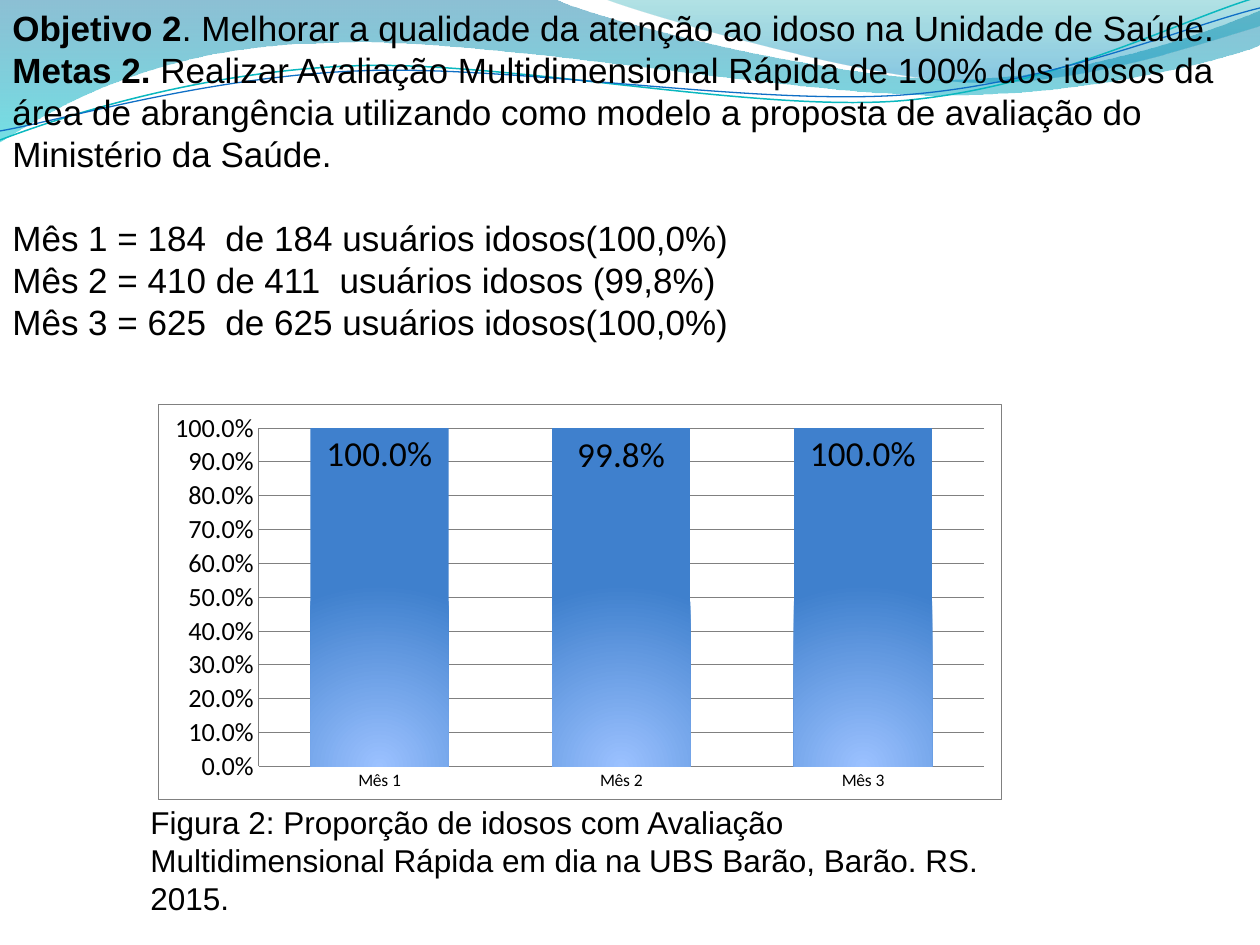
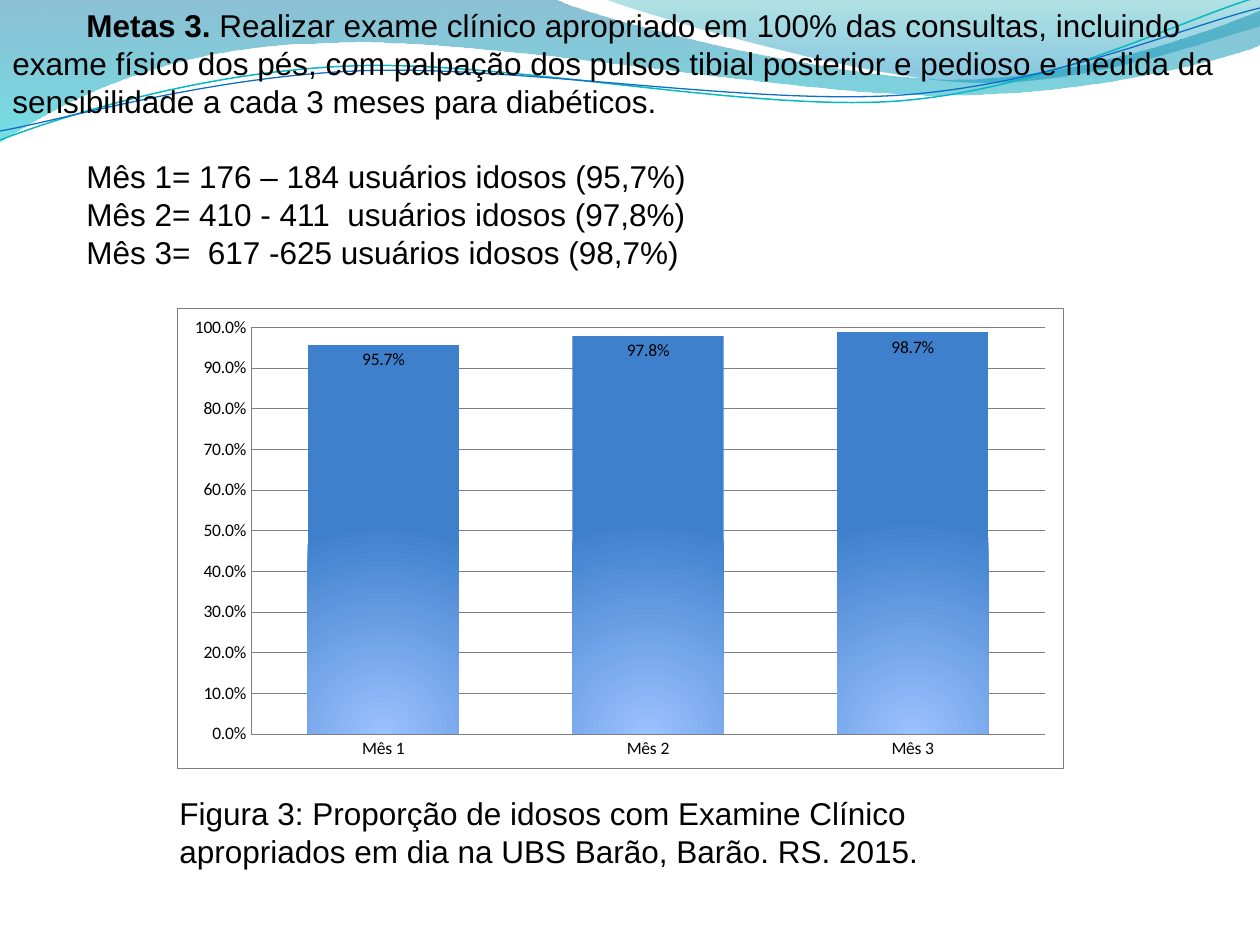
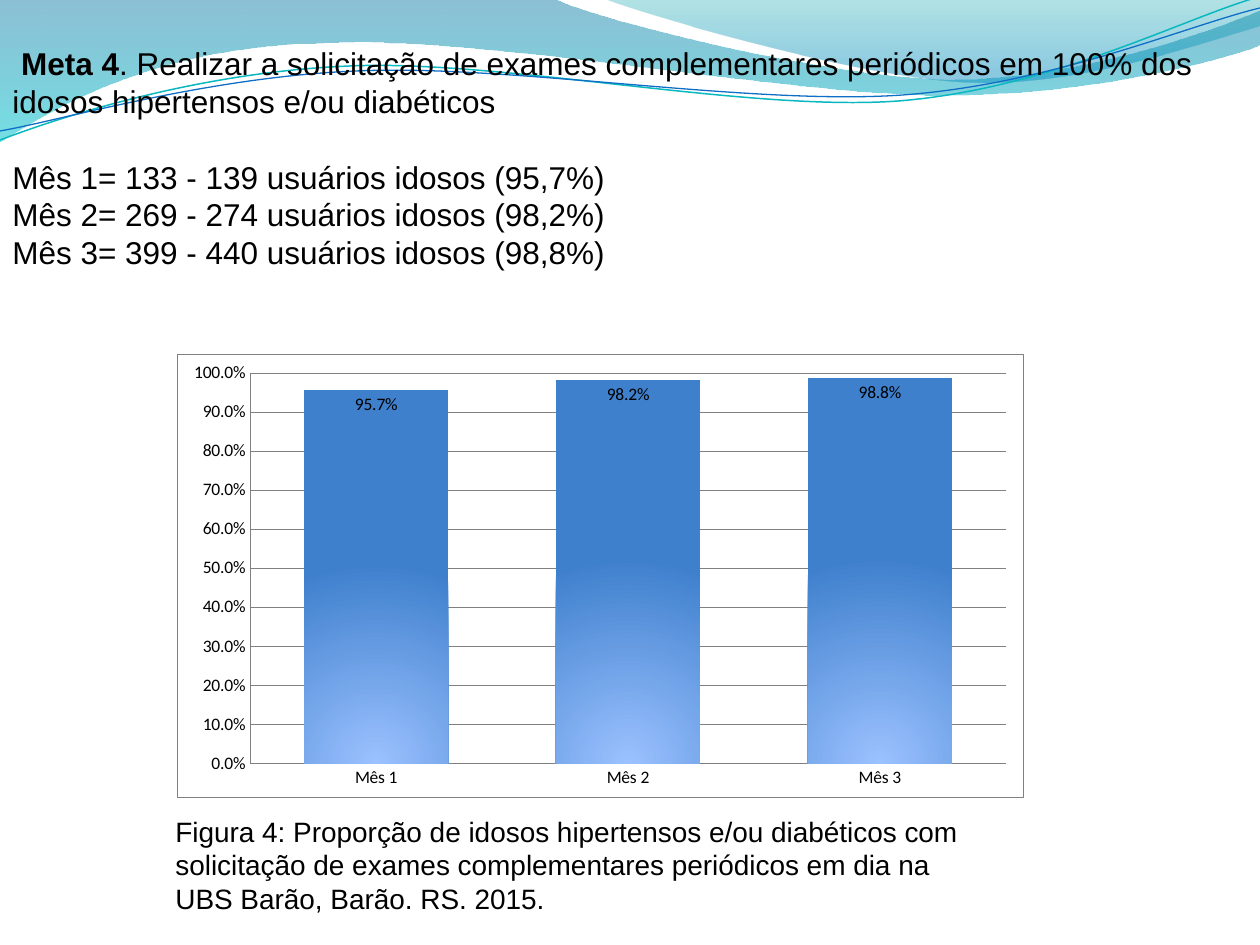
from lxml.etree import SubElement, fromstring
from pptx import Presentation
from pptx.chart.data import CategoryChartData as Data
from pptx.dml.color import RGBColor
from pptx.enum.chart import XL_CHART_TYPE as Kind, XL_LABEL_POSITION as Spot, XL_TICK_MARK as Tick
from pptx.oxml.ns import nsdecls, qn
from pptx.util import Pt

SCALE = 914400 / 126
WIDE, HIGH = 1260, 945
INK, GRID, PAPER = "000000", "808080", "FFFFFF"
PERCENT = "0.0%"
MONTHS = ["Mês 1", "Mês 2", "Mês 3"]
DOWN = '<a:lin ang="5400000" scaled="0"/>'
GLOW = '<a:path path="circle"><a:fillToRect l="50000" t="100000" r="50000" b="0"/></a:path>'
BAR = [(0, "9BC1FF", 100), (100, "3F80CD", 100)]

BANDS = [
    ([(0, 0), (554, -1), (600, 21, 837, 79, 955, 79), (1075, 79, 1207, 33, 1260, 11),
      (1261, 45), (1239, 55, 1096, 96, 940, 95), (784, 95, 481, 35, 324, 43),
      (163, 45, 58, 105, -1, 142)], [(0, "0074A1", 45), (100, "00C6CF", 55)]),
    ([(604, -1), (641, 14, 859, 78, 969, 82), (1079, 87, 1211, 40, 1260, 26), (1260, 0)],
     [(0, "00A1A9", 30), (80, "008BBF", 45)]),
]
LINES = [
    ([(0, 140), (60, 117, 199, 72, 349, 66), (498, 59, 747, 112, 898, 101),
      (1050, 89, 1182, 19, 1258, -3)], "0AB8BF", 0.85),
    ([(0, 131), (59, 121, 207, 77, 357, 71), (508, 64, 752, 106, 903, 95),
      (1053, 84, 1186, 26, 1260, 8)], "0F6FC6", 0.75),
]


def px(num):
    """Turn px into EMU."""
    return round(num * SCALE)


def tint(code):
    """Turn a hex string into a colour."""
    return RGBColor.from_string(code)


def shade(node, stops, way):
    """Replace a solid fill element with a gradient."""
    marks = "".join(
        f'<a:gs pos="{pos * 1000}"><a:srgbClr val="{code}"><a:alpha val="{part * 1000}"/>'
        f"</a:srgbClr></a:gs>" for pos, code, part in stops)
    grad = fromstring(f'<a:gradFill {nsdecls("a")} rotWithShape="1">'
                      f"<a:gsLst>{marks}</a:gsLst>{way}</a:gradFill>")
    node.getparent().replace(node, grad)


def outline(slide, route, close):
    """Draw a freeform whose six-number steps are Bezier curves."""
    dots = [(px(x), px(y)) for step in route for x, y in zip(step[::2], step[1::2])]
    pen = slide.shapes.build_freeform(*dots[0])
    pen.add_line_segments(dots[1:], close=close)
    shape = pen.convert_to_shape()
    shape.shadow.inherit = False
    legs = iter(shape.element.xpath(".//a:lnTo"))
    for step in route[1:]:
        leg = next(legs)
        if len(step) == 6:
            curve = SubElement(leg.getparent(), qn("a:cubicBezTo"))
            leg.addprevious(curve)
            for part in (leg, next(legs), next(legs)):
                curve.append(part[0])
                part.getparent().remove(part)
    return shape


def waves(slide, master):
    """Draw the bands and lines and hand them to the master."""
    parts = []
    for route, stops in BANDS:
        band = outline(slide, route, True)
        band.line.fill.background()
        band.fill.solid()
        shade(band.element.xpath("./p:spPr/a:solidFill")[0], stops, DOWN)
        parts.append(band)
    for route, code, width in LINES:
        curve = outline(slide, route, False)
        curve.fill.background()
        curve.line.color.rgb = tint(code)
        curve.line.width = Pt(width)
        parts.append(curve)
    for num, part in enumerate(parts, 20):
        part.element.xpath("./p:nvSpPr/p:cNvPr")[0].set("id", str(num))
        master.shapes.element.append(part.element)


def prose(slide, box, size, lines, gap=None, dent=0):
    """Write paragraphs; text before a bar is bold, and line gap has space above."""
    frame = slide.shapes.add_textbox(*map(px, box)).text_frame
    frame.word_wrap = True
    for num, line in enumerate(lines):
        para = frame.paragraphs[0] if num == 0 else frame.add_paragraph()
        para.line_spacing = Pt(size * 1.2)
        if num == gap:
            para.space_before = Pt(size * 1.2)
        if dent:
            para._p.get_or_add_pPr().set("indent", str(px(dent)))
        bold, _, plain = line.rpartition("|")
        for text, heavy in ((bold, True), (plain, False)):
            if text:
                run = para.add_run()
                run.text = text
                run.font.name = "Arial"
                run.font.size = Pt(size)
                run.font.bold = heavy
                run.font.color.rgb = tint(INK)


def style(font, size):
    """Format chart text."""
    font.name = "Calibri"
    font.size = Pt(size)
    font.color.rgb = tint(INK)


def thin(line):
    """Format a chart rule."""
    line.color.rgb = tint(GRID)
    line.width = Pt(0.25)


def columns(slide, box, vals, scale=10, label=10):
    """Draw the monthly percentages as columns."""
    data = Data(number_format=PERCENT)
    data.categories = MONTHS
    data.add_series("Series 1", vals)
    chart = slide.shapes.add_chart(Kind.COLUMN_CLUSTERED, *map(px, box), data).chart
    chart.has_legend = chart.has_title = False
    style(chart.font, 10)
    plot = chart.plots[0]
    plot.gap_width, plot.overlap, plot.vary_by_categories = 75, 40, False
    plot.series[0].format.fill.solid()
    shade(chart.element.xpath(".//c:ser/c:spPr/a:solidFill")[0], BAR, GLOW)
    tags = plot.series[0].data_labels
    tags.show_value = True
    tags.position = Spot.INSIDE_END
    tags.number_format, tags.number_format_is_linked = PERCENT, False
    style(tags.font, label)
    for axis, size in ((chart.category_axis, 10), (chart.value_axis, scale)):
        axis.major_tick_mark = axis.minor_tick_mark = Tick.NONE
        style(axis.tick_labels.font, size)
        thin(axis.format.line)
    axis = chart.value_axis
    axis.minimum_scale, axis.maximum_scale, axis.major_unit = 0, 1, 0.1
    axis.tick_labels.number_format, axis.tick_labels.number_format_is_linked = PERCENT, False
    thin(axis.major_gridlines.format.line)
    frame = fromstring(
        f'<c:spPr {nsdecls("c", "a")}><a:solidFill><a:srgbClr val="{PAPER}"/></a:solidFill>'
        f'<a:ln w="{Pt(0.25)}"><a:solidFill><a:srgbClr val="{GRID}"/></a:solidFill></a:ln></c:spPr>')
    chart.element.xpath("./c:chart")[0].addnext(frame)


def main():
    """Build the three slides."""
    prs = Presentation()
    prs.slide_width, prs.slide_height = px(WIDE), px(HIGH)
    one, two, three = [prs.slides.add_slide(prs.slide_layouts[6]) for _ in range(3)]
    waves(one, prs.slide_master)

    prose(one, (0, 0, WIDE, 394), 20, [
        "Objetivo 2|. Melhorar a qualidade da atenção ao idoso na Unidade de Saúde.",
        "Metas 2.| Realizar Avaliação Multidimensional Rápida de 100% dos idosos da área de "
        "abrangência utilizando como modelo a proposta de avaliação do Ministério da Saúde.",
        "Mês 1 = 184  de 184 usuários idosos(100,0%)",
        "Mês 2 = 410 de 411  usuários idosos (99,8%)",
        "Mês 3 = 625  de 625 usuários idosos(100,0%)"], gap=2)
    columns(one, (158, 404, 843, 395), (1, 0.998, 1), scale=15, label=20)
    prose(one, (138, 797, 867, 127), 18, [
        "Figura 2: Proporção de idosos com Avaliação Multidimensional Rápida em dia na UBS "
        "Barão, Barão. RS. 2015."])

    prose(two, (0, 0, WIDE, 357), 18, [
        "Metas 3.| Realizar exame clínico apropriado em 100% das consultas, incluindo exame "
        "físico dos pés, com palpação dos pulsos tibial posterior e pedioso e medida da "
        "sensibilidade a cada 3 meses para diabéticos.",
        "Mês 1= 176 – 184 usuários idosos (95,7%)",
        "Mês 2= 410 - 411  usuários idosos (97,8%)",
        "Mês 3=  617 -625 usuários idosos (98,7%)"], gap=1, dent=74)
    columns(two, (177, 308, 886, 460), (0.957, 0.978, 0.987))
    prose(two, (167, 788, 896, 89), 18, [
        "Figura 3: Proporção de idosos com Examine Clínico apropriados em dia na UBS Barão, "
        "Barão. RS. 2015."])

    prose(three, (0, 38, WIDE, 285), 18, [
        " Meta 4|. Realizar a solicitação de exames complementares periódicos em 100% dos "
        "idosos hipertensos e/ou diabéticos",
        "Mês 1= 133 - 139 usuários idosos (95,7%)",
        "Mês 2= 269 - 274 usuários idosos (98,2%)",
        "Mês 3= 399 - 440 usuários idosos (98,8%)"], gap=1)
    columns(three, (177, 354, 846, 443), (0.957, 0.982, 0.988))
    prose(three, (88, 808, 886, 152), 16, [
        "Figura 4: Proporção de idosos hipertensos e/ou diabéticos com",
        "solicitação de exames complementares periódicos em dia na",
        "UBS Barão, Barão. RS. 2015."], dent=75)
    prs.save("out.pptx")


if __name__ == "__main__":
    main()
